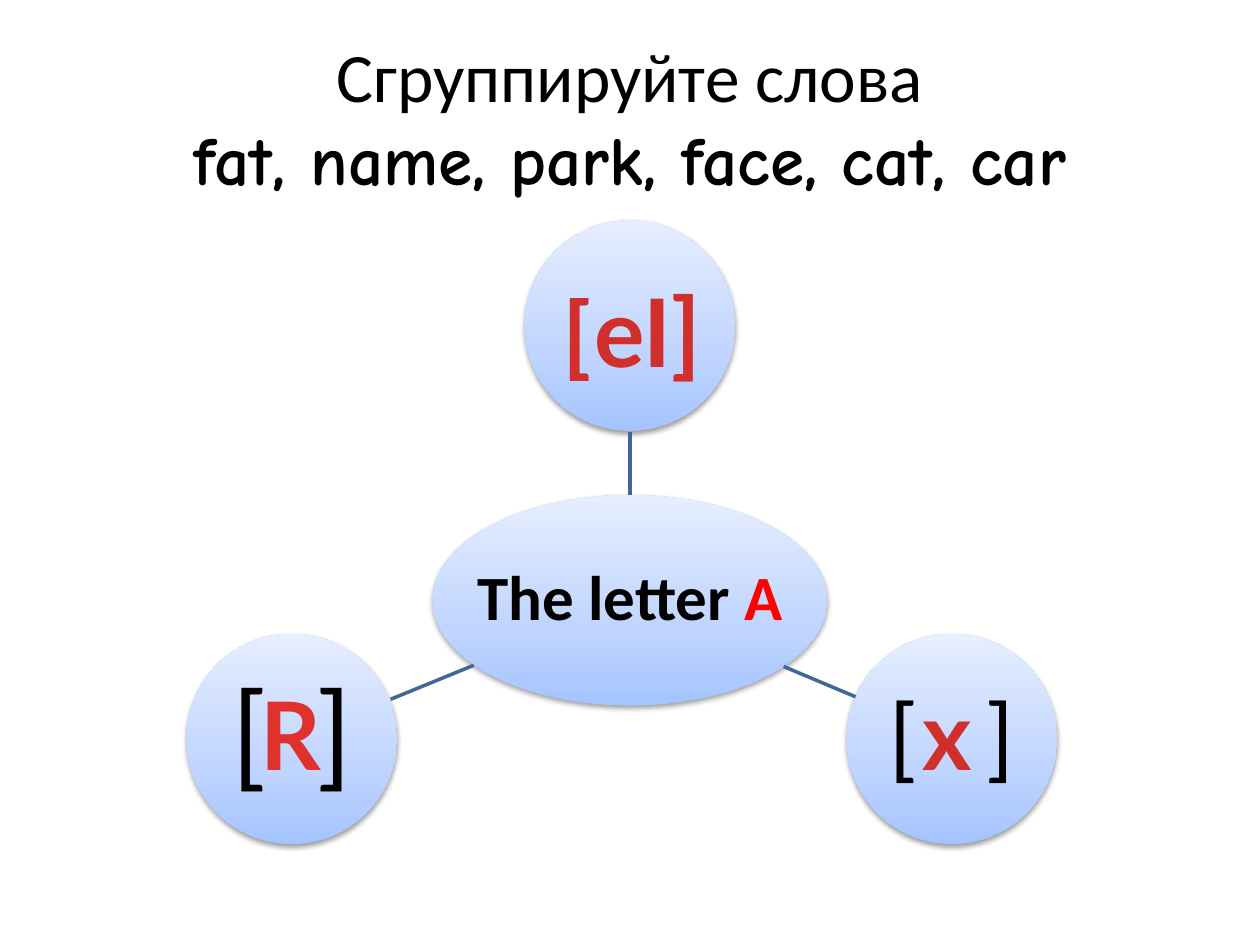
from pptx import Presentation
from pptx.dml.color import RGBColor
from pptx.enum.shapes import MSO_CONNECTOR, MSO_SHAPE
from pptx.enum.text import MSO_ANCHOR, MSO_AUTO_SIZE, PP_ALIGN
from pptx.oxml import parse_xml
from pptx.oxml.ns import nsdecls
from pptx.util import Inches, Pt

OVAL = MSO_SHAPE.OVAL
STRAIGHT = MSO_CONNECTOR.STRAIGHT
MIDDLE = MSO_ANCHOR.MIDDLE
CENTER = PP_ALIGN.CENTER
NO_AUTOFIT = MSO_AUTO_SIZE.NONE

COLORS = {
    "text": "000000", "accent": "FF0000", "red": "D02F2C", "bright": "E0322D",
    "spoke": "3F6797", "low": "A4C4FF", "mid": "BFD4FF", "high": "E6EEFF",
}
COLUMNS, ROWS = 100, 75
TITLE_ONLY = 5


class SlideBuilder:
    """Places elements on a grid of 100 columns by 75 rows."""

    def __init__(self, deck):
        self.deck = deck
        self.page = deck.slides.add_slide(deck.slide_layouts[TITLE_ONLY])

    def x(self, columns):
        return round(self.deck.slide_width * columns / COLUMNS)

    def y(self, rows):
        return round(self.deck.slide_height * rows / ROWS)

    def frame(self, left, top, width, height):
        return self.x(left), self.y(top), self.x(width), self.y(height)

    def centered(self, center, width, height):
        return self.frame(center[0] - width / 2, center[1] - height / 2, width, height)

    def span(self, para, text, size, font, color="text", bold=False, spacing=0):
        span = para.add_run()
        span.text = text
        span.font.size = Pt(size)
        span.font.name = font
        span.font.bold = bold
        span.font.color.rgb = RGBColor.from_string(COLORS[color])
        if spacing:
            span._r.get_or_add_rPr().set("spc", str(round(spacing * 100)))

    def title(self, place, lines):
        box = self.page.shapes.title
        box.left, box.top, box.width, box.height = self.frame(*place)
        box.text_frame.vertical_anchor = MIDDLE
        box.text_frame.auto_size = NO_AUTOFIT
        para = box.text_frame.paragraphs[0]
        para.alignment = CENTER
        for index, line in enumerate(lines):
            if index:
                para.add_line_break()
            self.span(para, *line)

    def bubble(self, center, width, height, spans=()):
        shape = self.page.shapes.add_shape(OVAL, *self.centered(center, width, height))
        shape.line.fill.background()
        shape.shadow.inherit = False
        properties = shape._element.spPr
        stops = "".join(
            f'<a:gs pos="{share * 1000}"><a:srgbClr val="{COLORS[name]}"/></a:gs>'
            for share, name in ((0, "low"), (35, "mid"), (100, "high")))
        properties.insert(2, parse_xml(
            f'<a:gradFill {nsdecls("a")}><a:gsLst>{stops}</a:gsLst>'
            '<a:lin ang="16200000" scaled="0"/></a:gradFill>'))
        properties[-1].append(parse_xml(
            f'<a:outerShdw {nsdecls("a")} blurRad="{Pt(3.1)}" dist="{Pt(1.6)}" '
            'dir="5400000" rotWithShape="0"><a:srgbClr val="000000">'
            '<a:alpha val="38000"/></a:srgbClr></a:outerShdw>'))
        if spans:
            self.label(center, width, height, spans, 0.9)

    def label(self, center, width, height, spans, line_spacing=1.0):
        box = self.page.shapes.add_textbox(*self.centered(center, width, height))
        text = box.text_frame
        text.word_wrap = False
        text.vertical_anchor = MIDDLE
        text.margin_left = text.margin_right = Inches(0.04)
        text.margin_top = text.margin_bottom = Inches(0.04)
        para = text.paragraphs[0]
        para.alignment = CENTER
        para.line_spacing = line_spacing
        for span in spans:
            self.span(para, *span)

    def spoke(self, start, end):
        line = self.page.shapes.add_connector(
            STRAIGHT, self.x(start[0]), self.y(start[1]), self.x(end[0]), self.y(end[1]))
        line.line.color.rgb = RGBColor.from_string(COLORS["spoke"])
        line.line.width = Pt(2)
        line._element.spPr.append(parse_xml(f'<a:effectLst {nsdecls("a")}/>'))


def brackets(size, font, gap):
    """A pair of brackets held apart by one widened space."""
    return [("[", size, font), (" ", size, font, "text", False, gap), ("]", size, font)]


def main():
    deck = Presentation()
    deck.slide_width, deck.slide_height = Inches(10), Inches(7.5)
    slide = SlideBuilder(deck)

    # Title
    slide.title((5, 3, 90, 12.5), [
        ("Сгруппируйте слова", 39.6, "Calibri"),
        ("fat, name, park, face, cat, car", 39.6, "Comic Neue", "text", True)])

    # Hub and the three sound circles around it
    size = 16.7
    hub, top, right, left = (50, 47.65), (50, 25.85), (75.55, 58.65), (23.15, 58.65)
    slide.bubble(hub, 31.3, size, [
        ("The letter ", 36, "Calibri", "text", True),
        ("A", 36, "Calibri", "accent", True)])
    slide.bubble(top, size, size)
    slide.bubble(right, size, size, brackets(55, "Calibri", 25))
    slide.bubble(left, size, size, brackets(65, "Lato", 12.5))

    # Spokes
    for start, end in (((50, 39.3), (50, 34.3)),
                       ((62.2, 52.9), (67.9, 55.3)),
                       ((37.6, 52.8), (31, 55.5))):
        slide.spoke(start, end)

    # Sounds
    slide.label((50.2, 26.15), 13.1, 10.1, [
        ("[", 54, "Calibri", "red", True), ("eI]", 54, "Lato", "red", True)])
    slide.label((75.15, 58.15), 8.1, 10.1, [("x", 54, "Lato", "red", True)])
    slide.label((23.1, 58.15), 10.5, 10.1, [("R", 54, "Lato", "bright", True, 0.5)])

    deck.save("out.pptx")


if __name__ == "__main__":
    main()
